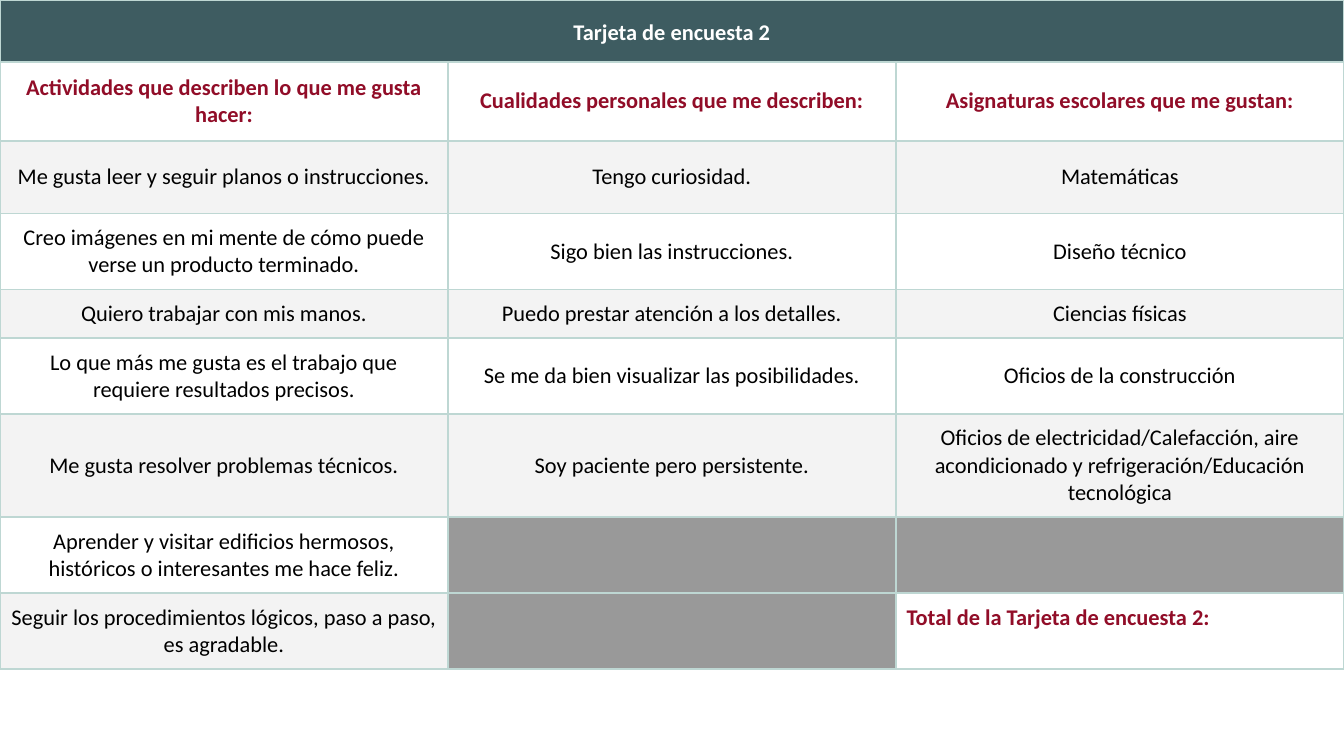
import pptx
import pptx.dml.color
import pptx.enum.text
import pptx.oxml
import pptx.oxml.ns
import pptx.util

Pt = pptx.util.Pt
RGB = pptx.dml.color.RGBColor.from_string
ALIGN = pptx.enum.text.PP_ALIGN
ANCHOR = pptx.enum.text.MSO_ANCHOR

TITLE = "Tarjeta de encuesta 2"
HEADS = [
    "Actividades que describen lo que me gusta hacer:",
    "Cualidades personales que me describen:",
    "Asignaturas escolares que me gustan:",
]
ITEMS = [
    ["Me gusta leer y seguir planos o instrucciones.",
     "Tengo curiosidad.", "Matemáticas"],
    ["Creo imágenes en mi mente de cómo puede verse un producto terminado.",
     "Sigo bien las instrucciones.", "Diseño técnico"],
    ["Quiero trabajar con mis manos.",
     "Puedo prestar atención a los detalles.", "Ciencias físicas"],
    ["Lo que más me gusta es el trabajo que requiere resultados precisos.",
     "Se me da bien visualizar las posibilidades.", "Oficios de la construcción"],
    ["Me gusta resolver problemas técnicos.",
     "Soy paciente pero persistente.",
     "Oficios de electricidad/Calefacción, aire acondicionado y "
     "refrigeración/Educación tecnológica"],
    ["Aprender y visitar edificios hermosos, históricos o interesantes me hace feliz.",
     "", ""],
    ["Seguir los procedimientos lógicos, paso a paso, es agradable.",
     "", "Total de la Tarjeta de encuesta 2:"],
]
ROWS = [[TITLE, "", ""], HEADS, *ITEMS]
HEIGHTS = [33.1, 42.4, 38.9, 40.7, 26.1, 40.7, 55.2, 40.7, 40.7]

THEME = {
    "font": "Calibri", "size": 12, "inset": 5.7, "line": 1,
    "bar": "3E5C61", "white": "FFFFFF", "band": "F3F3F3", "void": "999999",
    "accent": "910D28", "ink": "000000", "rule": "BED7D3",
}
WIDTH, HEIGHT = 720, 405


def look(row, col, text):
    """Return fill, text colour and bold for one cell."""
    if row == 0:
        return "bar", "white", True
    if row == 1:
        return "white", "accent", True
    if not text:
        return "void", "ink", False
    if text.startswith("Total"):
        return "white", "accent", True
    return ("white" if row % 2 else "band"), "ink", False


def rule(cell):
    """Draw a border on all four sides."""
    props = cell._tc.get_or_add_tcPr()
    for side in "LRTB":
        props.append(pptx.oxml.parse_xml(
            f'<a:ln{side} {pptx.oxml.ns.nsdecls("a")} w="{Pt(THEME["line"])}">'
            f'<a:solidFill><a:srgbClr val="{THEME["rule"]}"/></a:solidFill>'
            f'</a:ln{side}>'))


def dress(cell, row, col, text):
    fill, ink, bold = look(row, col, text)
    rule(cell)
    cell.fill.solid()
    cell.fill.fore_color.rgb = RGB(THEME[fill])
    cell.margin_left = cell.margin_right = Pt(THEME["inset"])
    cell.margin_top = cell.margin_bottom = Pt(THEME["inset"])
    total = text.startswith("Total")
    cell.vertical_anchor = ANCHOR.TOP if total else ANCHOR.MIDDLE
    para = cell.text_frame.paragraphs[0]
    para.text = text
    para.alignment = ALIGN.LEFT if total else ALIGN.CENTER
    if row == 0:
        para.line_spacing, para.space_after = 1.15, Pt(6)
    elif bold:
        para.space_before = Pt(10)
    for run in para.runs:
        run.font.name, run.font.size = THEME["font"], Pt(THEME["size"])
        run.font.bold = bold
        run.font.color.rgb = RGB(THEME[ink])


def main():
    deck = pptx.Presentation()
    deck.slide_width, deck.slide_height = Pt(WIDTH), Pt(HEIGHT)
    slide = deck.slides.add_slide(deck.slide_layouts.get_by_name("Blank"))
    table = slide.shapes.add_table(
        len(ROWS), len(HEADS), 0, 0, Pt(WIDTH), Pt(sum(HEIGHTS))).table
    table.first_row = table.horz_banding = False
    for line, high in zip(table.rows, HEIGHTS):
        line.height = Pt(high)
    for row, texts in enumerate(ROWS):
        for col, text in enumerate(texts):
            dress(table.cell(row, col), row, col, text)
    table.cell(0, 0).merge(table.cell(0, len(HEADS) - 1))
    deck.save("out.pptx")


if __name__ == "__main__":
    main()
